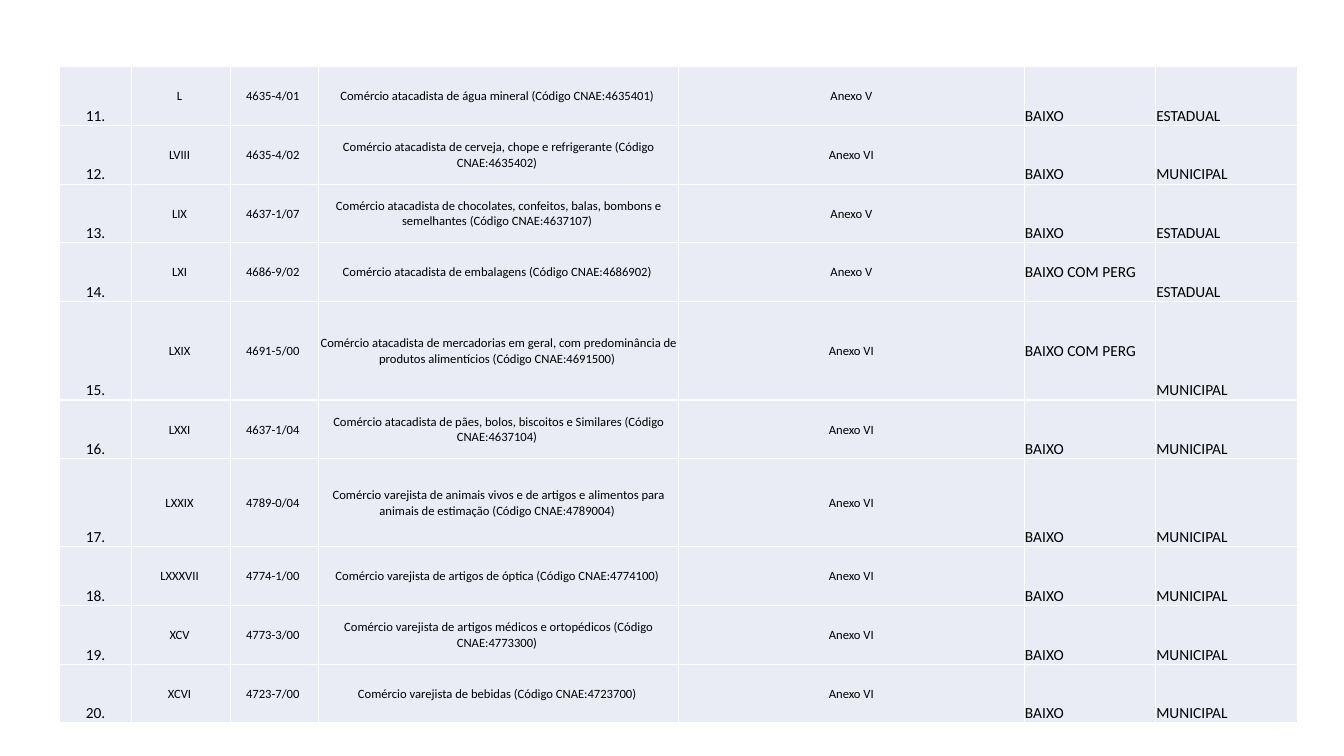
from dataclasses import dataclass

from lxml import etree
from pptx import Presentation
from pptx.dml import color
from pptx.enum import text
from pptx.oxml import ns
from pptx.table import _Cell
from pptx.util import Cm, Pt

BLACK = color.RGBColor(0x00, 0x00, 0x00)
WHITE = color.RGBColor(0xFF, 0xFF, 0xFF)
PALE_BLUE = color.RGBColor(0xE9, 0xEB, 0xF5)

FONT = "Calibri"
NBSP = " "
FIRST_NUMBER = 11
LOW = "BAIXO"
LOW_WITH_QUESTION = "BAIXO COM PERG"
STATE = "ESTADUAL"
CITY = "MUNICIPAL"


@dataclass(frozen=True)
class Column:
    width: float
    size: int
    anchor: text.MSO_ANCHOR
    alignment: text.PP_ALIGN


@dataclass(frozen=True)
class Activity:
    item: str
    code: str
    description: str
    annex: str
    risk: str
    authority: str
    height: float = 1.48

    def texts(self, number: int) -> list[str]:
        digits = self.code.replace("-", "").replace("/", "")
        return [
            f"{number}.",
            f"{self.item}{NBSP}",
            f"{self.code}{NBSP}",
            f"{self.description} (Código CNAE:{digits}){NBSP}",
            f"Anexo {self.annex}",
            self.risk,
            self.authority,
        ]


BOTTOM, MIDDLE = text.MSO_ANCHOR.BOTTOM, text.MSO_ANCHOR.MIDDLE
CENTER, LEFT = text.PP_ALIGN.CENTER, text.PP_ALIGN.LEFT

COLUMNS = [
    Column(1.82, 11, BOTTOM, CENTER),
    Column(2.48, 9, MIDDLE, CENTER),
    Column(2.22, 9, MIDDLE, CENTER),
    Column(9.08, 9, MIDDLE, CENTER),
    Column(8.71, 9, MIDDLE, CENTER),
    Column(3.31, 11, BOTTOM, LEFT),
    Column(3.57, 11, BOTTOM, LEFT),
]

ACTIVITIES = [
    Activity("L", "4635-4/01", "Comércio atacadista de água mineral", "V", LOW, STATE),
    Activity("LVIII", "4635-4/02", "Comércio atacadista de cerveja, chope e refrigerante",
             "VI", LOW, CITY),
    Activity("LIX", "4637-1/07",
             "Comércio atacadista de chocolates, confeitos, balas, bombons e semelhantes",
             "V", LOW, STATE),
    Activity("LXI", "4686-9/02", "Comércio atacadista de embalagens",
             "V", LOW_WITH_QUESTION, STATE),
    Activity("LXIX", "4691-5/00",
             "Comércio atacadista de mercadorias em geral, com predominância de "
             "produtos alimentícios", "VI", LOW_WITH_QUESTION, CITY, 2.48),
    Activity("LXXI", "4637-1/04", "Comércio atacadista de pães, bolos, biscoitos e Similares",
             "VI", LOW, CITY),
    Activity("LXXIX", "4789-0/04",
             "Comércio varejista de animais vivos e de artigos e alimentos para "
             "animais de estimação", "VI", LOW, CITY, 2.22),
    Activity("LXXXVII", "4774-1/00", "Comércio varejista de artigos de óptica",
             "VI", LOW, CITY),
    Activity("XCV", "4773-3/00", "Comércio varejista de artigos médicos e ortopédicos",
             "VI", LOW, CITY),
    Activity("XCVI", "4723-7/00", "Comércio varejista de bebidas", "VI", LOW, CITY),
]


def add_borders(cell: _Cell) -> None:
    properties = cell._tc.get_or_add_tcPr()
    for index, side in enumerate(("lnL", "lnR", "lnT", "lnB")):
        line = etree.Element(ns.qn(f"a:{side}"), w=str(Pt(1)))
        fill = etree.SubElement(line, ns.qn("a:solidFill"))
        etree.SubElement(fill, ns.qn("a:srgbClr"), val=str(WHITE))
        properties.insert(index, line)


def fill_cell(cell: _Cell, content: str, column: Column) -> None:
    cell.margin_left = cell.margin_right = cell.margin_top = Cm(0.02)
    cell.margin_bottom = 0
    cell.vertical_anchor = MIDDLE if content == LOW_WITH_QUESTION else column.anchor
    cell.fill.solid()
    cell.fill.fore_color.rgb = PALE_BLUE
    add_borders(cell)
    paragraph = cell.text_frame.paragraphs[0]
    paragraph.alignment = column.alignment
    run = paragraph.add_run()
    run.text = content
    run.font.name = FONT
    run.font.size = Pt(column.size)
    run.font.color.rgb = BLACK


def main() -> None:
    presentation = Presentation()
    presentation.slide_width = Cm(33.87)
    presentation.slide_height = Cm(19.05)
    slide = presentation.slides.add_slide(presentation.slide_layouts[6])

    width = sum(column.width for column in COLUMNS)
    height = sum(activity.height for activity in ACTIVITIES)
    table = slide.shapes.add_table(
        len(ACTIVITIES), len(COLUMNS), Cm(1.5), Cm(1.68), Cm(width), Cm(height)
    ).table
    table.first_row = False
    table.horz_banding = False

    for index, column in enumerate(COLUMNS):
        table.columns[index].width = Cm(column.width)
    for row, activity in enumerate(ACTIVITIES):
        table.rows[row].height = Cm(activity.height)
        for index, content in enumerate(activity.texts(FIRST_NUMBER + row)):
            fill_cell(table.cell(row, index), content, COLUMNS[index])

    presentation.save("out.pptx")


if __name__ == "__main__":
    main()
